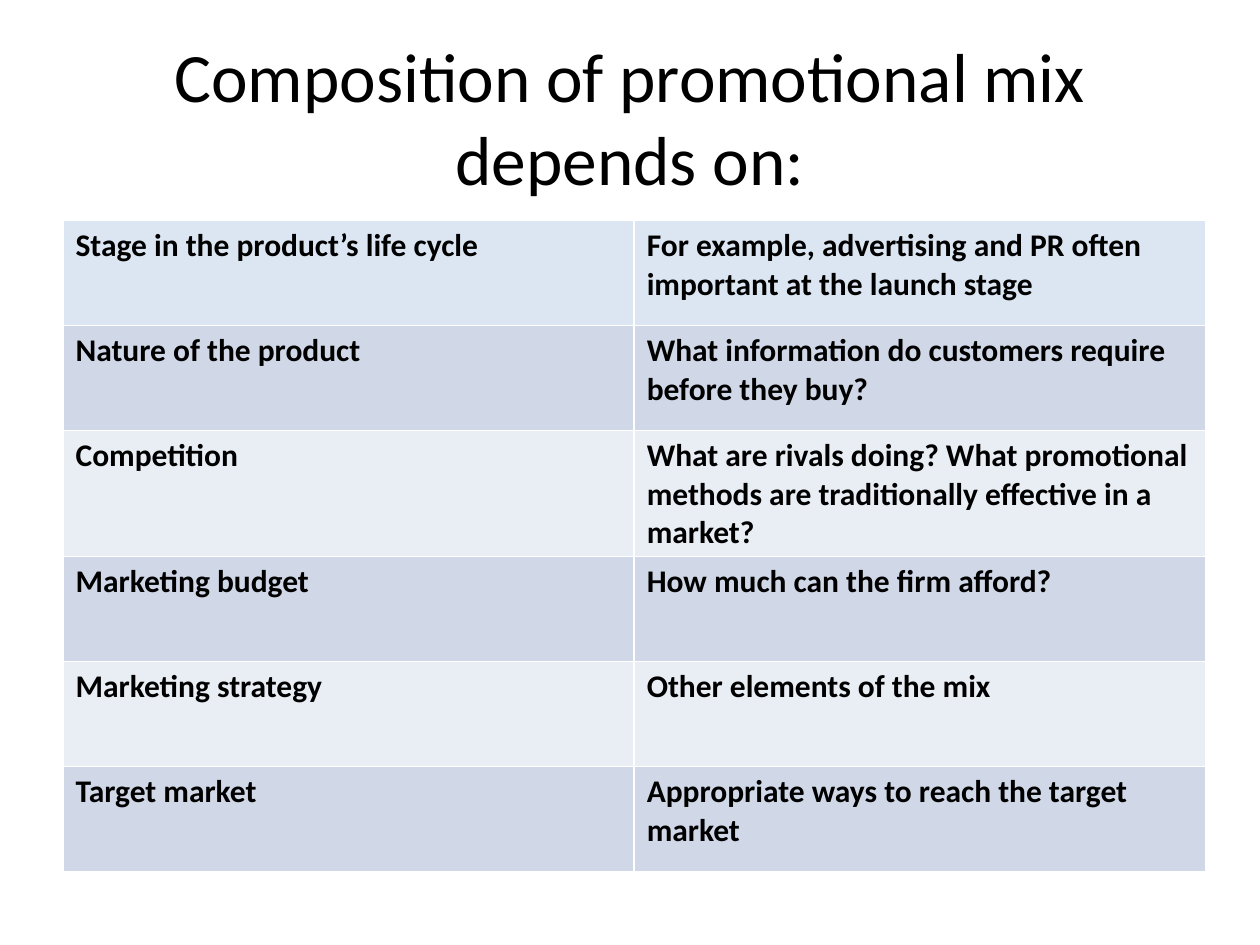
"""Build a slide listing what the composition of the promotional mix depends on."""
from pptx import Presentation
from pptx.dml.color import RGBColor
from pptx.enum.text import MSO_ANCHOR, PP_ALIGN
from pptx.util import Pt

HEADING = "Composition of promotional mix depends on:"
FACTORS = [
    ("Stage in the product’s life cycle",
     "For example, advertising and PR often important at the launch stage"),
    ("Nature of the product",
     "What information do customers require before they buy?"),
    ("Competition",
     "What are rivals doing? What promotional methods are traditionally effective in a market?"),
    ("Marketing budget", "How much can the firm afford?"),
    ("Marketing strategy", "Other elements of the mix"),
    ("Target market", "Appropriate ways to reach the target market"),
]

FONT = "Calibri"
BLACK = RGBColor(0x00, 0x00, 0x00)
FIRST_ROW = RGBColor(0xDC, 0xE6, 0xF2)
BANDS = [RGBColor(0xE9, 0xED, 0xF4), RGBColor(0xD0, 0xD8, 0xE8)]
LEFT, TABLE_TOP = 36, 126
COLUMN_WIDTH, ROW_HEIGHT = 326.4, 60


def style(paragraph, size, bold):
    font = paragraph.runs[0].font
    font.name, font.size, font.bold = FONT, Pt(size), bold
    font.color.rgb = BLACK


def add_heading(slide):
    heading = slide.shapes.add_textbox(Pt(LEFT), Pt(21.6), Pt(648), Pt(90)).text_frame
    heading.word_wrap = True
    heading.vertical_anchor = MSO_ANCHOR.MIDDLE
    heading.text = HEADING
    heading.paragraphs[0].alignment = PP_ALIGN.CENTER
    style(heading.paragraphs[0], 39.6, False)


def add_factors(slide):
    rows, columns = len(FACTORS), len(FACTORS[0])
    factors = slide.shapes.add_table(
        rows, columns, Pt(LEFT), Pt(TABLE_TOP),
        Pt(columns * COLUMN_WIDTH), Pt(rows * ROW_HEIGHT)).table
    for r, factor in enumerate(FACTORS):
        for c, wording in enumerate(factor):
            cell = factors.cell(r, c)
            cell.fill.solid()
            cell.fill.fore_color.rgb = BANDS[r % 2] if r else FIRST_ROW
            cell.text_frame.text = wording
            style(cell.text_frame.paragraphs[0], 18, True)


def main():
    deck = Presentation()
    deck.slide_width, deck.slide_height = Pt(720), Pt(540)
    slide = deck.slides.add_slide(deck.slide_layouts[6])
    add_heading(slide)
    add_factors(slide)
    deck.save("out.pptx")


if __name__ == "__main__":
    main()
